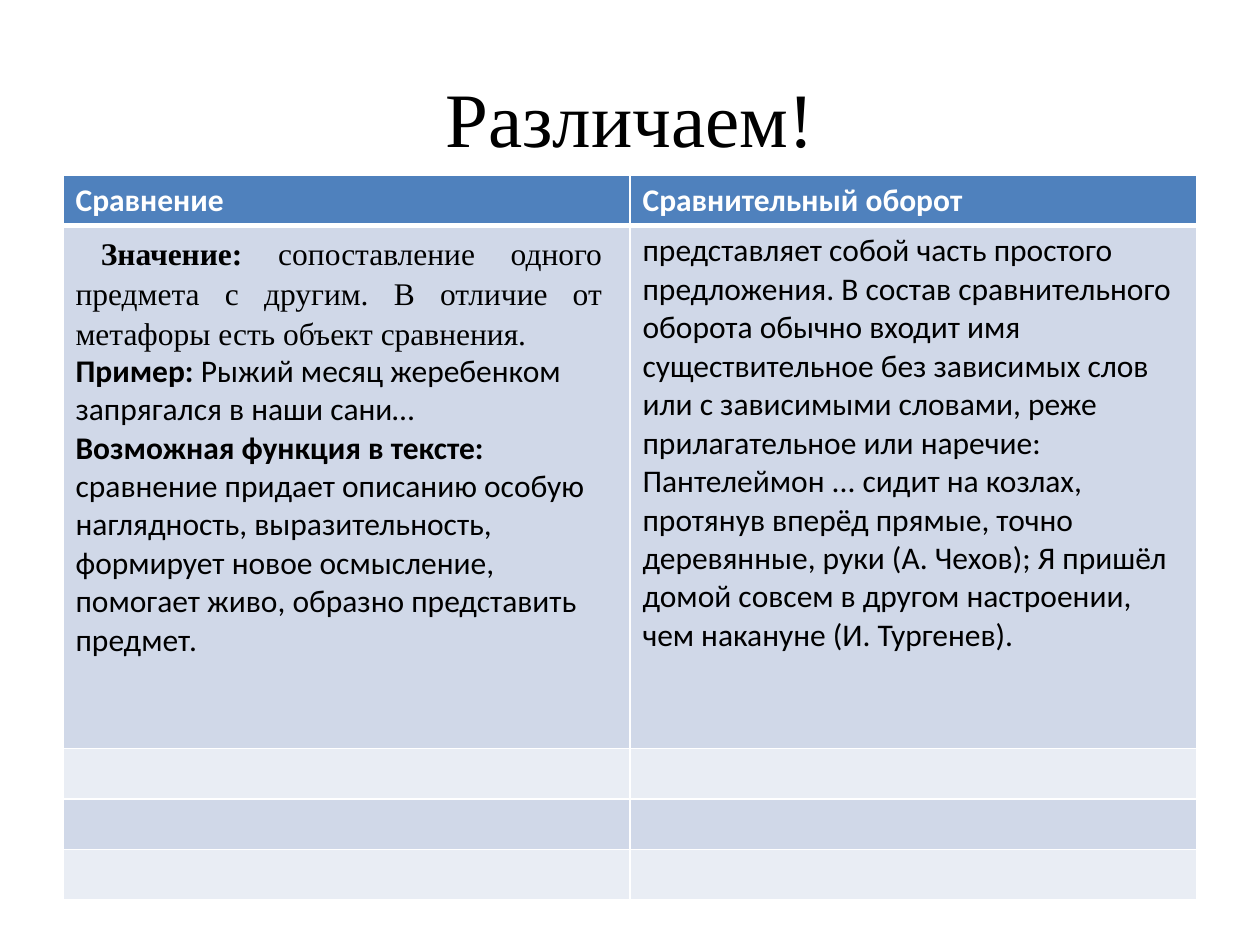
from dataclasses import dataclass

from lxml.etree import SubElement
from pptx import Presentation
from pptx.dml.color import RGBColor
from pptx.enum.text import MSO_ANCHOR, PP_ALIGN
from pptx.oxml.ns import qn
from pptx.util import Inches, Pt


@dataclass(frozen=True)
class Theme:
    """Colours, fonts and type sizes of the slide."""
    black: str = "000000"
    white: str = "FFFFFF"
    header: str = "4F81BD"
    bands: tuple = ("D0D8E8", "E9EDF4")
    serif: str = "Times New Roman"
    sans: str = "Calibri"
    title_size: int = 44
    body_size: int = 18


THEME = Theme()
HEADINGS = ["Сравнение", "Сравнительный оборот"]
MEANING = [
    ("Значение: ", True),
    ("сопоставление одного предмета с другим. В отличие от метафоры есть объект сравнения.", False),
]
EXAMPLE = [
    ("Пример:", True),
    (" Рыжий месяц жеребенком запрягался в наши сани…", False),
]
FUNCTION = [
    ("Возможная функция в тексте:", True),
    (" сравнение придает описанию особую наглядность, выразительность, формирует новое "
     "осмысление, помогает живо, образно представить предмет.", False),
]
PHRASE = [
    ("представляет собой часть простого предложения. В состав сравнительного оборота обычно "
     "входит имя существительное без зависимых слов или с зависимыми словами, реже "
     "прилагательное или наречие: Пантелеймон ... сидит на козлах, протянув вперёд прямые, "
     "точно деревянные, руки (А. Чехов); Я пришёл домой совсем в другом настроении, "
     "чем накануне (И. Тургенев).", False),
]


def add_runs(paragraph, runs, font=THEME.sans, size=THEME.body_size, color=THEME.black):
    """Add (text, bold) runs in one font, size and colour."""
    for text, bold in runs:
        run = paragraph.add_run()
        run.text = text
        run.font.name = font
        run.font.size = Pt(size)
        run.font.bold = bold
        run.font.color.rgb = RGBColor.from_string(color)


def style_cell(cell, fill, top=1, bottom=1):
    """Give a cell white borders and a solid fill."""
    properties = cell._tc.get_or_add_tcPr()
    for tag, width in (("lnL", 1), ("lnR", 1), ("lnT", top), ("lnB", bottom)):
        line = SubElement(properties, qn(f"a:{tag}"), w=str(Pt(width)))
        SubElement(SubElement(line, qn("a:solidFill")), qn("a:srgbClr"), val=THEME.white)
    cell.fill.solid()
    cell.fill.fore_color.rgb = RGBColor.from_string(fill)


def add_title(slide, left, top, width, height):
    """Place the centred title in the given box."""
    frame = slide.shapes.add_textbox(left, top, width, height).text_frame
    frame.word_wrap = True
    frame.vertical_anchor = MSO_ANCHOR.MIDDLE
    paragraph = frame.paragraphs[0]
    paragraph.alignment = PP_ALIGN.CENTER
    add_runs(paragraph, [("Различаем!", False)], THEME.serif, THEME.title_size)


def fill_comparison(cell):
    """Write the meaning, example and function of a comparison."""
    frame = cell.text_frame
    meaning = frame.paragraphs[0]
    meaning.alignment = PP_ALIGN.JUSTIFY
    meaning.line_spacing = 1.15
    properties = meaning._p.get_or_add_pPr()
    properties.set("marR", str(Inches(0.12)))
    properties.set("indent", str(Inches(0.2)))
    add_runs(meaning, MEANING, THEME.serif)
    for runs in (EXAMPLE, FUNCTION):
        add_runs(frame.add_paragraph(), runs)


def add_comparison_table(slide, left, top, width, height):
    """Place the banded two-column table in the given box."""
    row_count, small_row = 5, Inches(0.4)
    table = slide.shapes.add_table(row_count, len(HEADINGS), left, top, width, height).table
    for row in table.rows:
        row.height = small_row
    table.rows[1].height = height - small_row * (row_count - 1)
    for column, heading in enumerate(HEADINGS):
        header = table.cell(0, column)
        style_cell(header, THEME.header, bottom=3)
        add_runs(header.text_frame.paragraphs[0], [(heading, True)], color=THEME.white)
        for row in range(1, row_count):
            style_cell(table.cell(row, column), THEME.bands[(row - 1) % 2], top=3 if row == 1 else 1)
    fill_comparison(table.cell(1, 0))
    add_runs(table.cell(1, 1).text_frame.paragraphs[0], PHRASE)


def main():
    """Build and save the presentation."""
    presentation = Presentation()
    presentation.slide_width = Inches(10)
    presentation.slide_height = Inches(7.5)
    slide = presentation.slides.add_slide(presentation.slide_layouts[6])
    add_title(slide, Inches(0.5), Inches(0.3), Inches(9), Inches(1.25))
    add_comparison_table(slide, Inches(0.5), Inches(1.39), Inches(9), Inches(5.75))
    presentation.save("out.pptx")


if __name__ == "__main__":
    main()
